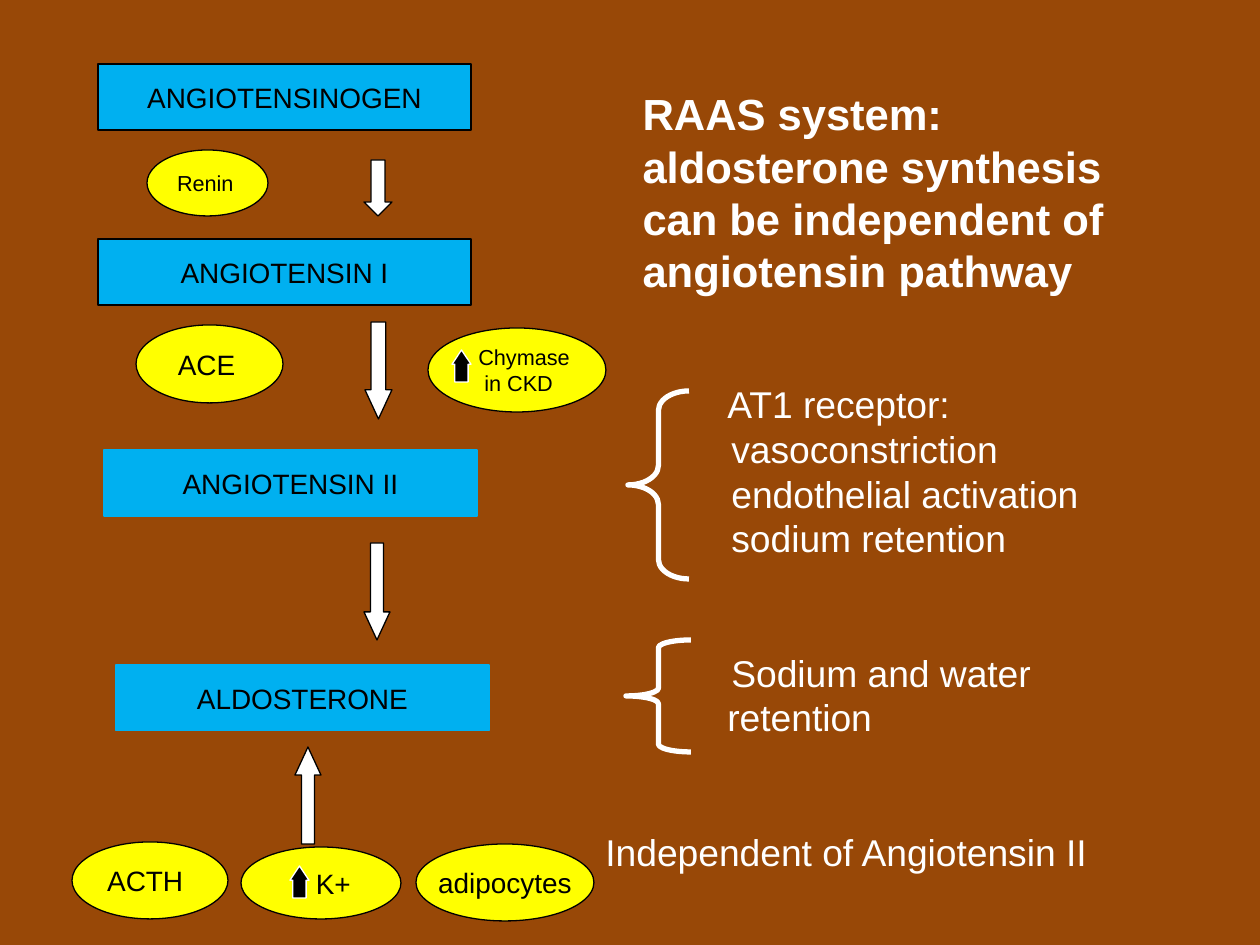
"""Build the RAAS pathway slide: hormone cascade, triggers and effects."""
import pptx
import pptx.util
import pptx.dml.color
import pptx.enum.shapes
import pptx.enum.text

PX = 914400 // 126
FONT = "Arial"
LINE_RATIO = 1.2
COLORS = {"brown": "984807", "blue": "00B0F0", "yellow": "FFFF00",
          "white": "FFFFFF", "black": "000000"}
KIND = pptx.enum.shapes.MSO_SHAPE
ALIGN = pptx.enum.text.PP_ALIGN
ANCHOR = pptx.enum.text.MSO_ANCHOR

TITLE = ["RAAS system:",
         "aldosterone synthesis can be independent of angiotensin pathway"]
TITLE_BOX = (630, 81, 551, 224)

HORMONE_SIZE = (373, 66)
HORMONES = [
    ("ANGIOTENSINOGEN", 98, 64, "black"),
    ("ANGIOTENSIN I", 98, 239, "black"),
    ("ANGIOTENSIN II", 104, 450, "blue"),
    ("ALDOSTERONE", 116, 665, "blue"),
]

TRIGGERS = [
    ((147, 150, 121, 66), 12.4, ALIGN.LEFT, [("Renin", 0)]),
    ((136, 325, 147, 78), 16, ALIGN.LEFT, [("ACE", 8)]),
    ((428, 328, 178, 84), 12.4, ALIGN.LEFT, [("Chymase", 12), ("in CKD", 18)]),
    ((72, 842, 156, 77), 16, ALIGN.LEFT, [("ACTH", 0)]),
    ((241, 847, 160, 72), 16, ALIGN.LEFT, [("K+", 39)]),
    ((416, 844, 178, 77), 16, ALIGN.CENTER, [("adipocytes", 0)]),
]

ARROWS = [
    (KIND.DOWN_ARROW, (364, 160, 28, 56), (0.5, 0.5), "white", "black"),
    (KIND.DOWN_ARROW, (365, 322, 27, 97), (0.55, 1.08), "white", "black"),
    (KIND.DOWN_ARROW, (364, 543, 26, 97), (0.5, 1.08), "white", "black"),
    (KIND.UP_ARROW, (295, 747, 26, 97), (0.5, 1.08), "white", "black"),
    (KIND.UP_ARROW, (452, 350, 19, 32), (0.7, 0.75), "black", "white"),
    (KIND.UP_ARROW, (290, 866, 19, 32), (0.7, 0.75), "black", "white"),
]

BRACES = [((628, 391, 61, 188), 0.32), ((626, 640, 65, 112), 0.12)]

EFFECTS_BOX = (593, 375, 512, 556)
EFFECTS = [
    [("AT1 receptor:", 122), ("vasoconstriction", 126),
     ("endothelial activation", 126), ("sodium retention", 126)],
    [("Sodium and water", 126), ("retention", 122)],
    [("Independent of Angiotensin II", 0)],
]


def px(value):
    return pptx.util.Emu(value * PX)


def color(name):
    return pptx.dml.color.RGBColor.from_string(COLORS[name])


def write(text_frame, lines, size, color_name, align=ALIGN.LEFT, bold=False):
    text_frame.text = "\n".join(text for text, indent in lines)
    for paragraph, (text, indent) in zip(text_frame.paragraphs, lines):
        paragraph.alignment = align
        paragraph.line_spacing = pptx.util.Pt(round(size * LINE_RATIO, 1))
        paragraph.space_before = pptx.util.Pt(0)
        if indent:
            properties = paragraph._p.get_or_add_pPr()
            properties.set("marL", str(px(indent)))
            properties.set("indent", "0")
        for run in paragraph.runs:
            run.font.name = FONT
            run.font.size = pptx.util.Pt(size)
            run.font.bold = bold
            run.font.color.rgb = color(color_name)


def add_shape(slide, kind, box, fill, line, width=0.75, adjustments=()):
    shape = slide.shapes.add_shape(kind, *map(px, box))
    shape.shadow.inherit = False
    if fill:
        shape.fill.solid()
        shape.fill.fore_color.rgb = color(fill)
    else:
        shape.fill.background()
    shape.line.color.rgb = color(line)
    shape.line.width = pptx.util.Pt(width)
    for index, value in enumerate(adjustments):
        shape.adjustments[index] = value
    return shape


def add_label(shape, lines, size, align):
    text_frame = shape.text_frame
    text_frame.word_wrap = False
    text_frame.vertical_anchor = ANCHOR.MIDDLE
    write(text_frame, lines, size, "black", align)


def add_title(slide):
    title = slide.shapes.title
    title.left, title.top, title.width, title.height = map(px, TITLE_BOX)
    text_frame = title.text_frame
    text_frame.word_wrap = True
    text_frame.auto_size = pptx.enum.text.MSO_AUTO_SIZE.NONE
    text_frame.vertical_anchor = ANCHOR.TOP
    write(text_frame, [(text, 0) for text in TITLE], 24.9, "white", bold=True)


def add_effects(slide):
    size = 21.3
    text_frame = slide.shapes.add_textbox(*map(px, EFFECTS_BOX)).text_frame
    text_frame.word_wrap = True
    write(text_frame, [line for group in EFFECTS for line in group], size, "white")
    start = 0
    for group in EFFECTS[:-1]:
        start += len(group)
        gap = round(2 * size * LINE_RATIO, 1)
        text_frame.paragraphs[start].space_before = pptx.util.Pt(gap)


def main():
    presentation = pptx.Presentation()
    presentation.slide_width = px(1260)
    presentation.slide_height = px(945)
    slide = presentation.slides.add_slide(presentation.slide_layouts[5])
    slide.background.fill.solid()
    slide.background.fill.fore_color.rgb = color("brown")

    add_title(slide)
    for name, left, top, line in HORMONES:
        shape = add_shape(slide, KIND.RECTANGLE, (left, top, *HORMONE_SIZE), "blue", line)
        add_label(shape, [(name, 0)], 16, ALIGN.CENTER)
    for box, size, align, lines in TRIGGERS:
        shape = add_shape(slide, KIND.OVAL, box, "yellow", "black")
        add_label(shape, lines, size, align)
    for kind, box, adjustments, fill, line in ARROWS:
        add_shape(slide, kind, box, fill, line, adjustments=adjustments)
    for box, curl in BRACES:
        add_shape(slide, KIND.LEFT_BRACE, box, None, "white", 3, (curl, 0.5))
    add_effects(slide)

    presentation.save("out.pptx")


if __name__ == "__main__":
    main()
